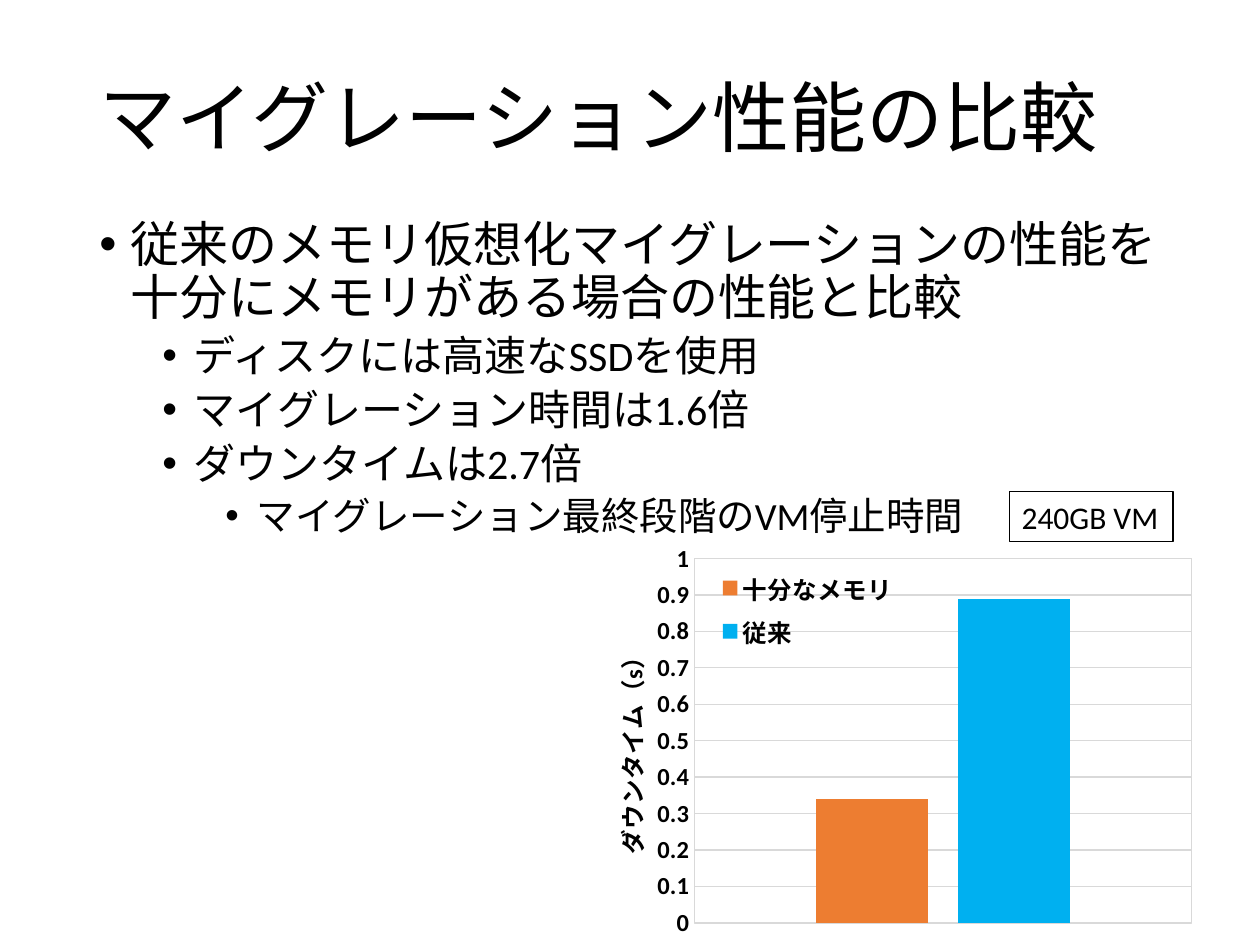
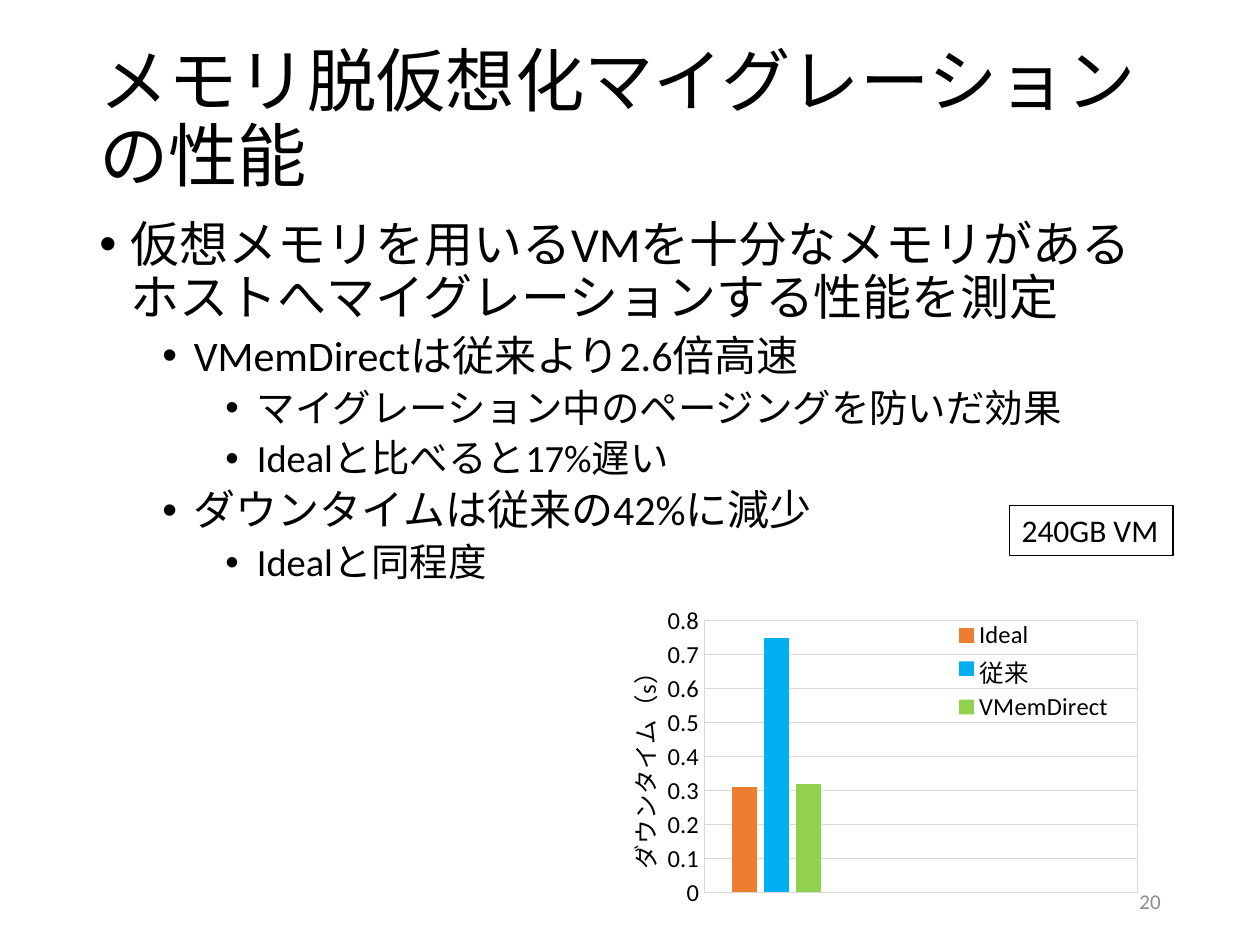
from lxml.etree import SubElement
from pptx import Presentation
from pptx.chart.data import CategoryChartData
from pptx.dml.color import RGBColor
from pptx.enum.chart import XL_CHART_TYPE as ChartType
from pptx.enum.chart import XL_LEGEND_POSITION as LegendPosition
from pptx.enum.chart import XL_TICK_MARK as TickMark
from pptx.enum.shapes import MSO_SHAPE as Preset
from pptx.enum.text import MSO_ANCHOR as Anchor
from pptx.enum.text import MSO_AUTO_SIZE as AutoSize
from pptx.enum.text import PP_ALIGN as Align
from pptx.oxml import parse_xml
from pptx.oxml.ns import nsdecls, qn
from pptx.util import Inches, Pt

FONT = "Calibri"
BLACK, WHITE, GRAY, GRID = "000000", "FFFFFF", "8C8C8C", "D9D9D9"
ORANGE, BLUE, GREEN = "ED7D31", "00B0F0", "92D050"

TITLE_BOX = (0.69, 0.4, 8.62, 1.13)
BODY_BOX = (0.69, 1.7, 8.62, 5.06)
NUMBER_BOX = (7.06, 6.95, 2.25, 0.4)

# Size and space before of each outline level, in points
LEVELS = [(28, 10), (24, 5), (22, 5)]


def rgb(value):
    return RGBColor.from_string(value)


def style_font(font, size, color=BLACK, bold=False):
    font.name = FONT
    font.size = Pt(size)
    font.bold = bold
    font.color.rgb = rgb(color)


def add_text(slide, box, text, size, color=BLACK, align=None):
    """Text box with one vertically centred paragraph."""
    frame = slide.shapes.add_textbox(*map(Inches, box)).text_frame
    frame.word_wrap = True
    frame.vertical_anchor = Anchor.MIDDLE
    frame.text = text
    paragraph = frame.paragraphs[0]
    paragraph.alignment = align
    style_font(paragraph.runs[0].font, size, color)
    return paragraph


def add_title(slide, text, size):
    add_text(slide, TITLE_BOX, text, size).line_spacing = 0.9


def add_outline(slide, box, items):
    """Bulleted outline from (level, text) pairs."""
    frame = slide.shapes.add_textbox(*map(Inches, box)).text_frame
    frame.word_wrap = True
    for index, (level, text) in enumerate(items):
        paragraph = frame.add_paragraph() if index else frame.paragraphs[0]
        size, space = LEVELS[level]
        paragraph.text = text
        paragraph.level = level
        paragraph.line_spacing = 0.9
        paragraph.space_before = Pt(space)
        style_font(paragraph.runs[0].font, size)
        # Hanging bullet
        properties = paragraph._p.get_or_add_pPr()
        properties.set("marL", str(Inches(0.25 + 0.5 * level)))
        properties.set("indent", str(Inches(-0.25)))
        SubElement(properties, qn("a:buFont")).set("typeface", "Arial")
        SubElement(properties, qn("a:buChar")).set("char", "•")


def add_badge(slide, top):
    """Outlined label with the size of the virtual machine."""
    badge = slide.shapes.add_shape(
        Preset.RECTANGLE, *map(Inches, (8.01, top, 1.3, 0.4)))
    badge.shadow.inherit = False
    badge.fill.background()
    badge.line.color.rgb = rgb(BLACK)
    badge.line.width = Pt(0.75)
    frame = badge.text_frame
    frame.word_wrap = False
    frame.auto_size = AutoSize.SHAPE_TO_FIT_TEXT
    frame.text = "240GB VM"
    frame.paragraphs[0].alignment = Align.LEFT
    style_font(frame.paragraphs[0].runs[0].font, 18)


def manual_layout(x, y, width=None, height=None, inner=False):
    """Layout element in fractions of the chart."""
    target = '<c:layoutTarget val="inner"/>' if inner else ""
    size = f'<c:w val="{width}"/><c:h val="{height}"/>' if width else ""
    return parse_xml(
        f'<c:layout {nsdecls("c")}><c:manualLayout>{target}'
        '<c:xMode val="edge"/><c:yMode val="edge"/>'
        f'<c:x val="{x}"/><c:y val="{y}"/>{size}'
        '</c:manualLayout></c:layout>')


def place_part(element, layout):
    """Replace the layout of a plot area, legend or title."""
    for old in element.findall(qn("c:layout")):
        element.remove(old)
    overlay = element.find(qn("c:overlay"))
    if overlay is None:
        element.insert(0, layout)
    else:
        overlay.addprevious(layout)


def fill_and_frame(chart):
    """White chart background and thin frame around the plot."""
    names = nsdecls("c", "a")
    chart._chartSpace.find(qn("c:chart")).addnext(parse_xml(
        f'<c:spPr {names}><a:solidFill><a:srgbClr val="{WHITE}"/></a:solidFill>'
        '<a:ln><a:noFill/></a:ln></c:spPr>'))
    chart._chartSpace.find(".//" + qn("c:plotArea")).append(parse_xml(
        f'<c:spPr {names}><a:noFill/><a:ln w="9525"><a:solidFill>'
        f'<a:srgbClr val="{GRID}"/></a:solidFill></a:ln></c:spPr>'))


def add_downtime_chart(slide, box, series, maximum, plot_at, legend_at,
                       title_at, categories=("1",), bold=False):
    """Clustered columns; series holds (name, value, color)."""
    data = CategoryChartData()
    data.categories = categories
    for name, value, _ in series:
        data.add_series(name, [value])
    chart = slide.shapes.add_chart(
        ChartType.COLUMN_CLUSTERED, *map(Inches, box), data).chart
    chart.has_title = False
    style_font(chart.font, 14, bold=bold)

    # Columns
    plot = chart.plots[0]
    plot.gap_width = 219
    plot.overlap = -27
    plot.vary_by_categories = False
    for column, (_, _, color) in zip(plot.series, series):
        column.format.fill.solid()
        column.format.fill.fore_color.rgb = rgb(color)

    # Axes
    chart.category_axis.visible = False
    axis = chart.value_axis
    axis.minimum_scale = 0
    axis.maximum_scale = maximum
    axis.major_unit = 0.1
    axis.major_tick_mark = TickMark.NONE
    axis.format.line.fill.background()
    axis.tick_labels.number_format = "General"
    axis.tick_labels.number_format_is_linked = False
    style_font(axis.tick_labels.font, 14, bold=bold)
    grid = axis.major_gridlines.format.line
    grid.color.rgb = rgb(GRID)
    grid.width = Pt(0.75)

    # Axis title, turned upwards
    frame = axis.axis_title.text_frame
    frame.text = "ダウンタイム（s）"
    style_font(frame.paragraphs[0].runs[0].font, 14, bold=bold)
    turned = frame._txBody.find(qn("a:bodyPr"))
    turned.set("rot", "-5400000")
    turned.set("vert", "horz")

    # Legend
    chart.has_legend = True
    legend = chart.legend
    legend.position = LegendPosition.CORNER
    legend.include_in_layout = True
    style_font(legend.font, 14, bold=bold)

    # Places of the parts
    place_part(chart._chartSpace.find(".//" + qn("c:plotArea")),
               manual_layout(*plot_at, inner=True))
    place_part(legend._element, manual_layout(*legend_at))
    place_part(axis.axis_title._element, manual_layout(*title_at))
    fill_and_frame(chart)


def add_comparison_slide(presentation):
    slide = presentation.slides.add_slide(presentation.slide_layouts[6])
    add_outline(slide, BODY_BOX, [
        (0, "従来のメモリ仮想化マイグレーションの性能を十分にメモリがある場合の性能と比較"),
        (1, "ディスクには高速なSSDを使用"),
        (1, "マイグレーション時間は1.6倍"),
        (1, "ダウンタイムは2.7倍"),
        (2, "マイグレーション最終段階のVM停止時間"),
    ])
    add_title(slide, "マイグレーション性能の比較", 44)
    add_downtime_chart(
        slide, (4.56, 4.27, 5, 3.25),
        [("十分なメモリ", 0.34, ORANGE), ("従来", 0.89, BLUE)],
        maximum=1, plot_at=(0.19, 0.05, 0.79, 0.89),
        legend_at=(0.21, 0.06, 0.32, 0.23), title_at=(0.05, 0.25), bold=True)
    add_badge(slide, 3.9)


def add_performance_slide(presentation):
    slide = presentation.slides.add_slide(presentation.slide_layouts[6])
    add_outline(slide, BODY_BOX, [
        (0, "仮想メモリを用いるVMを十分なメモリがあるホストへマイグレーションする性能を測定"),
        (1, "VMemDirectは従来より2.6倍高速"),
        (2, "マイグレーション中のページングを防いだ効果"),
        (2, "Idealと比べると17%遅い"),
        (1, "ダウンタイムは従来の42%に減少"),
        (2, "Idealと同程度"),
    ])
    add_title(slide, "メモリ脱仮想化マイグレーションの性能", 39.6)
    add_badge(slide, 4.01)
    # Only the first of three categories holds values
    add_downtime_chart(
        slide, (4.65, 4.75, 4.47, 2.51),
        [("Ideal", 0.31, ORANGE), ("従来", 0.75, BLUE),
         ("VMemDirect", 0.32, GREEN)],
        maximum=0.8, plot_at=(0.21, 0.07, 0.77, 0.86),
        legend_at=(0.64, 0.06, 0.31, 0.34), title_at=(0.06, 0.18),
        categories=("1", "2", "3"))
    add_text(slide, NUMBER_BOX, "20", 12, GRAY, Align.RIGHT)


def main():
    presentation = Presentation()
    presentation.slide_width = Inches(10)
    presentation.slide_height = Inches(7.5)
    add_comparison_slide(presentation)
    add_performance_slide(presentation)
    presentation.save("out.pptx")


if __name__ == "__main__":
    main()
